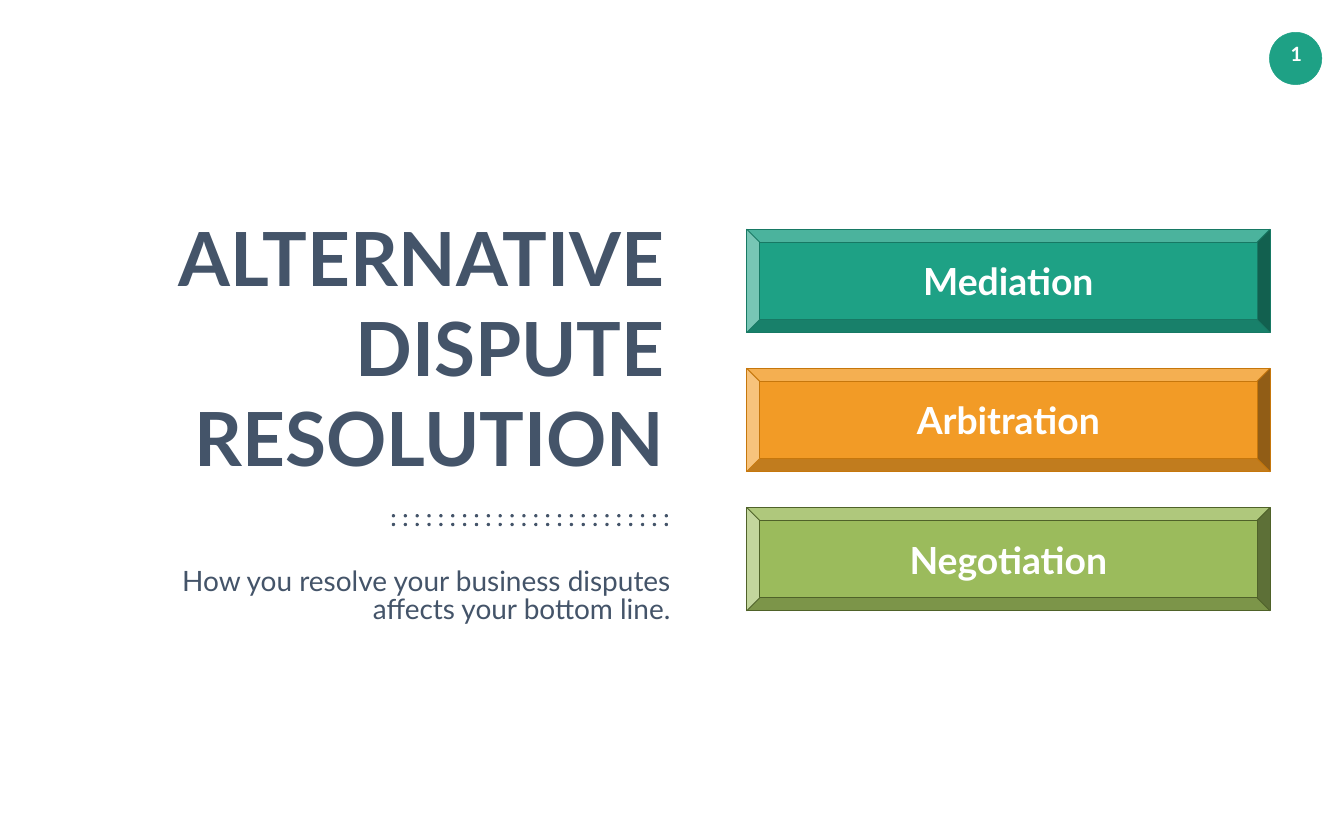
"""Build the alternative dispute resolution slide."""
from dataclasses import dataclass

from pptx import Presentation
from pptx.dml.color import RGBColor
from pptx.enum.shapes import MSO_SHAPE as Shape
from pptx.enum.text import MSO_ANCHOR as Anchor, PP_ALIGN as Align
from pptx.util import Emu, Pt

PX_PER_INCH = 100
EMU_PER_PX = 914400 // PX_PER_INCH


@dataclass(frozen=True)
class Theme:
    """Colours, font and type sizes of the slide."""
    font: str = "Lato"
    ink: str = "445469"
    white: str = "FFFFFF"
    teal: str = "1EA185"
    teal_edge: str = "177964"
    orange: str = "F29B26"
    orange_edge: str = "C6770C"
    green: str = "9BBB5C"
    green_edge: str = "4F6229"
    title_size: int = 80
    button_size: int = 40
    subtitle_size: int = 30
    number_size: int = 21


THEME = Theme()
METHODS = (
    ("Mediation", THEME.teal, THEME.teal_edge),
    ("Arbitration", THEME.orange, THEME.orange_edge),
    ("Negotiation", THEME.green, THEME.green_edge),
)


def px(length):
    """Convert pixels to EMU."""
    return Emu(round(length * EMU_PER_PX))


def set_text(text_frame, text, size, colour, align, bold=False):
    """Fill a text frame and format all its runs alike."""
    text_frame.word_wrap = True
    text_frame.text = text
    for paragraph in text_frame.paragraphs:
        paragraph.alignment = align
        for run in paragraph.runs:
            run.font.name = THEME.font
            run.font.size = Pt(size)
            run.font.bold = bold
            run.font.color.rgb = RGBColor.from_string(colour)


def add_text(shapes, box, text, size, colour, align, bold=False, inset=(10, 5)):
    """Add a text box with the given horizontal and vertical insets."""
    text_frame = shapes.add_textbox(*map(px, box)).text_frame
    text_frame.margin_left = text_frame.margin_right = px(inset[0])
    text_frame.margin_top = text_frame.margin_bottom = px(inset[1])
    set_text(text_frame, text, size, colour, align, bold)
    return text_frame


def add_filled(shapes, kind, box, fill, line=None, line_width=1):
    """Add a flat preset shape, outlined only if a line colour is given."""
    shape = shapes.add_shape(kind, *map(px, box))
    shape.shadow.inherit = False
    shape.fill.solid()
    shape.fill.fore_color.rgb = RGBColor.from_string(fill)
    if line:
        shape.line.color.rgb = RGBColor.from_string(line)
        shape.line.width = Pt(line_width)
    else:
        shape.line.fill.background()
    return shape


def add_page_number(shapes):
    """Add the round page number badge."""
    add_filled(shapes, Shape.OVAL, (1889, 48, 78, 78), THEME.teal, THEME.teal, 0.5)
    add_text(shapes, (1896, 55, 66, 51), "1", THEME.number_size, THEME.white,
             Align.CENTER, bold=True, inset=(15, 7))


def add_dotted_divider(shapes, left=583, right=989, columns=24, rows=(765, 778)):
    """Add evenly spaced dots in two rows."""
    dots = shapes.add_group_shape().shapes
    step = (right - left) / (columns - 1)
    for top in rows:
        for column in range(columns):
            add_filled(dots, Shape.OVAL, (left + column * step, top, 5, 5), THEME.ink)


def add_heading(shapes):
    """Add the title, the divider and the subtitle."""
    add_text(shapes, (235, 311, 764, 414), "ALTERNATIVE\nDISPUTE\nRESOLUTION",
             THEME.title_size, THEME.ink, Align.RIGHT, bold=True)
    add_dotted_divider(shapes)
    subtitle = add_text(
        shapes, (168, 837, 848, 102),
        "How you resolve your business disputes affects your bottom line.",
        THEME.subtitle_size, THEME.ink, Align.RIGHT, inset=(18, 9))
    paragraph = subtitle.paragraphs[0]
    paragraph.line_spacing = Pt(30.3)
    paragraph.space_before = Pt(6)


def add_method_buttons(shapes, top=341, pitch=207):
    """Add one bevelled button for each resolution method."""
    buttons = shapes.add_group_shape().shapes
    for index, (label, fill, edge) in enumerate(METHODS):
        box = (1111, top + index * pitch, 779, 154)
        button = add_filled(buttons, Shape.BEVEL, box, fill, edge)
        button.text_frame.vertical_anchor = Anchor.MIDDLE
        set_text(button.text_frame, label, THEME.button_size, THEME.white,
                 Align.CENTER, bold=True)


def main():
    """Create the presentation and save it."""
    presentation = Presentation()
    presentation.slide_width = px(2000)
    presentation.slide_height = px(1250)
    slide = presentation.slides.add_slide(presentation.slide_layouts[6])
    add_page_number(slide.shapes)
    add_heading(slide.shapes)
    add_method_buttons(slide.shapes)
    presentation.save("out.pptx")


if __name__ == "__main__":
    main()
